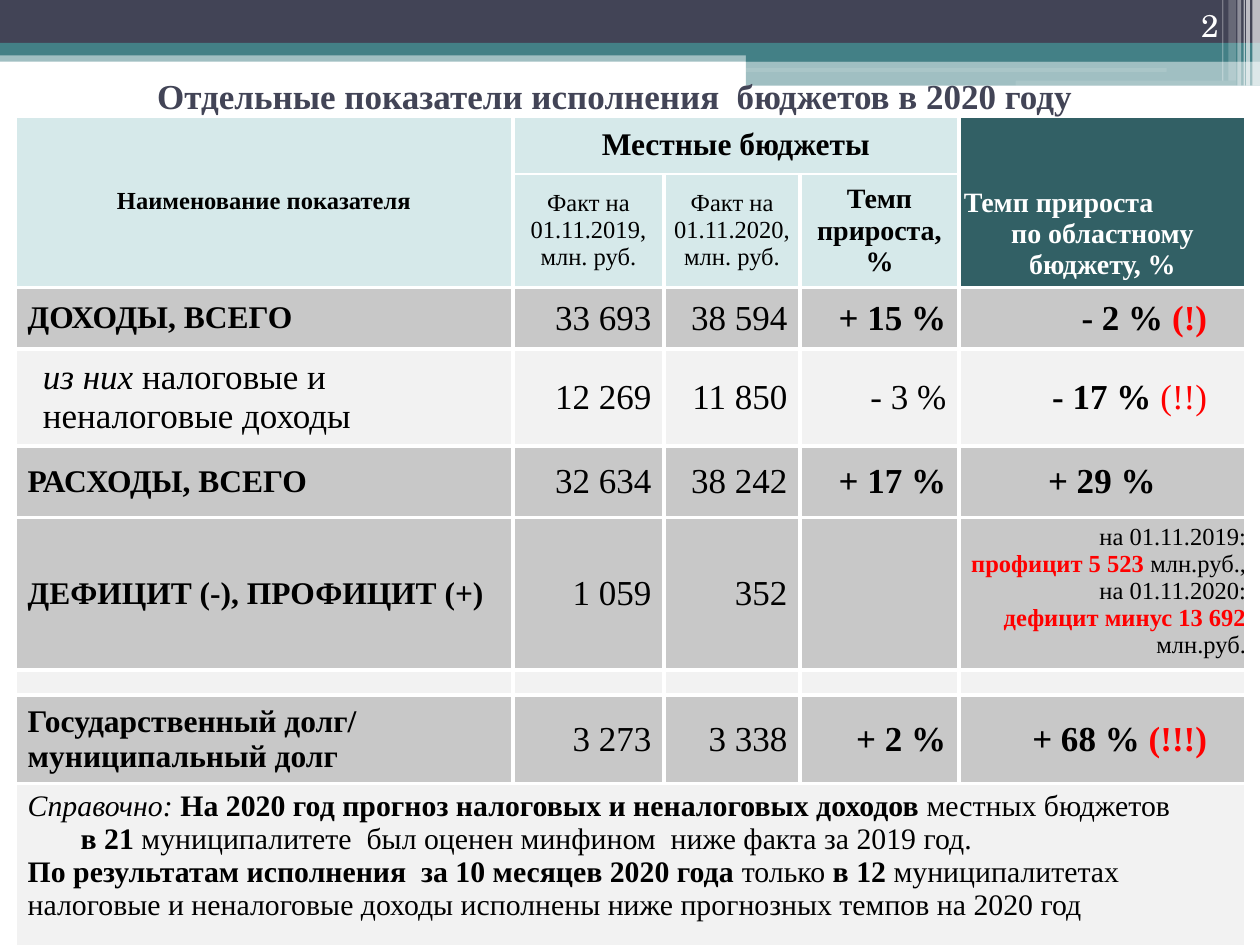
from lxml import etree
from pptx import Presentation
from pptx.dml.color import RGBColor
from pptx.enum import shapes, text
from pptx.oxml.ns import qn
from pptx.util import Inches, Pt

THEME = dict(
    font="Times New Roman", number_font="TeX Gyre Schola",
    navy="424456", teal="438086", white="FFFFFF", black="000000", red="FF0000",
    head="D6E9EA", dark="326065", strong="C8C8C8", light="F2F2F2",
    title=20, page=18, figure=20, label=18, note=17, head_size=16, small=14, spacer=6,
)
L, C, R = text.PP_ALIGN.LEFT, text.PP_ALIGN.CENTER, text.PP_ALIGN.RIGHT
TOP, MID, BOTTOM = (text.MSO_ANCHOR.TOP, text.MSO_ANCHOR.MIDDLE, text.MSO_ANCHOR.BOTTOM)

# left, top, width, height, colour, opacity %
BARS = [
    (0, 0.4, 10, 0.09, "teal", 50),
    (0, 0, 10, 0.34, "navy", 100),
    (0, 0.34, 10, 0.1, "teal", 100),
    (5.92, 0.39, 4.08, 0.1, "teal", 100),
    (5.92, 0.48, 4.08, 0.2, "teal", 50),
]
ROUNDED = [(5.91, 0.54, 3.35, 0.03, "white", 11), (8.06, 0.64, 1.75, 0.04, "white", 11)]
STRIPES = [  # left, width, height, opacity %
    (9.94, 0.06, 0.68, 65), (9.89, 0.03, 0.68, 65), (9.87, 0.01, 0.68, 60),
    (9.82, 0.03, 0.68, 40), (9.75, 0.06, 0.64, 20), (9.7, 0.01, 0.64, 30),
]

COLS = [3.95, 1.2, 1.08, 1.26, 2.28]
ROWS = [0.46, 0.9, 0.49, 0.77, 0.57, 1.2, 0.2, 0.7, 1.33]

# A run is (text, style): b bold, i italic, r red, w white. A paragraph is a list of runs.
# row, column, paragraphs, size, fill
HEADS = [
    (0, 0, [[("Наименование показателя", "b")]], "small", "head"),
    (0, 1, [[("Местные бюджеты", "b")]], "label", "head"),
    (0, 4, [[("Темп прироста", "bw")], [("по областному бюджету, %", "bw")]],
     "head_size", "dark"),
    (1, 1, [[("Факт на 01.11.2019, млн. руб.", "")]], "small", "head"),
    (1, 2, [[("Факт на 01.11.2020, млн. руб.", "")]], "small", "head"),
    (1, 3, [[("Темп прироста, %", "b")]], "head_size", "head"),
]
# label, 2019, 2020, local growth, regional growth, fill
INDICATORS = [
    ([("ДОХОДЫ, ВСЕГО", "b")], "33 693", "38 594", [("+ 15 %", "b")],
     [[("- 2 % ", "b"), ("(!)", "br")]], "strong"),
    ([("из них ", "i"), ("налоговые и неналоговые доходы", "")], "12 269", "11 850",
     [("- 3 %", "")], [[("- 17 % ", "b"), ("(!!)", "r")]], "light"),
    ([("РАСХОДЫ, ВСЕГО", "b")], "32 634", "38 242", [("+ 17 %", "b")],
     [[("+ 29 %", "b")]], "strong"),
    ([("ДЕФИЦИТ (-), ПРОФИЦИТ (+)", "b")], "1 059", "352", [],
     [[("на 01.11.2019:", "")],
      [("профицит 5 523 ", "br"), ("млн.руб.,", "")],
      [("на 01.11.2020:", "")],
      [("дефицит минус 13 692 ", "br"), ("млн.руб.", "")]], "strong"),
    ([], "", "", [], [[]], "light"),
    ([("Государственный долг/ муниципальный долг", "b")], "3 273", "3 338",
     [("+ 2 %", "b")], [[("+ 68 % ", "b"), ("(!!!)", "br")]], "strong"),
]
SUBSET, EXPENSES, DEFICIT, SPACER = 1, 2, 3, 4  # positions in INDICATORS
NOTE = [
    [("Справочно: ", "i"), ("На 2020 год прогноз налоговых и неналоговых доходов ", "b"),
     ("местных бюджетов", ""), ("\n", ""), ("в 21 ", "b"),
     ("муниципалитете  был оценен минфином  ниже факта за 2019 год.", "")],
    [("По результатам исполнения  за 10 месяцев 2020 года ", "b"), ("только ", ""),
     ("в 12 ", "b"),
     ("муниципалитетах налоговые и неналоговые доходы исполнены ниже прогнозных "
      "темпов на 2020 год", "")],
]


def rgb(name):
    return RGBColor.from_string(THEME[name])


def add_bar(s, kind, left, top, width, height, color, opacity):
    sp = s.shapes.add_shape(kind, *map(Inches, (left, top, width, height)))
    sp.shadow.inherit = False
    sp.line.fill.background()
    sp.fill.solid()
    sp.fill.fore_color.rgb = rgb(color)
    if opacity < 100:
        clr = sp._element.spPr.find(".//" + qn("a:srgbClr"))
        etree.SubElement(clr, qn("a:alpha"), val=str(opacity * 1000))


def add_run(p, words, size, color="black", bold=False, italic=False, font="font"):
    r = p.add_run()
    r.text = words
    f = r.font
    f.name, f.size, f.bold, f.italic = THEME[font], Pt(THEME[size]), bold, italic
    f.color.rgb = rgb(color)


def write(tf, paragraphs, size, align):
    for i, runs in enumerate(paragraphs):
        p = tf.add_paragraph() if i else tf.paragraphs[0]
        p.alignment = align
        for words, style in runs:
            if words == "\n":
                p.add_line_break()
                continue
            color = "red" if "r" in style else "white" if "w" in style else "black"
            add_run(p, words, size, color, "b" in style, "i" in style)
        if not runs:
            etree.SubElement(p._p, qn("a:endParaRPr"), sz=str(THEME[size] * 100))


def set_cell(cell, paragraphs, size, fill, align=L, anchor=MID, margins=(0.1, 0.05, 0.1, 0.05)):
    cell.margin_left, cell.margin_top, cell.margin_right, cell.margin_bottom = map(Inches, margins)
    cell.vertical_anchor = anchor
    write(cell.text_frame, paragraphs, size, align)
    cell.fill.solid()
    cell.fill.fore_color.rgb = rgb(fill)


def add_borders(cell, inner_edge=None):
    """White lines on all four sides; inner_edge is drawn thinner."""
    tcPr = cell._tc.get_or_add_tcPr()
    for i, side in enumerate(("lnL", "lnR", "lnT", "lnB")):
        width = Pt(1 if side == inner_edge else 2.25)
        ln = etree.Element(qn("a:" + side), w=str(int(width)))
        fill = etree.SubElement(ln, qn("a:solidFill"))
        etree.SubElement(fill, qn("a:srgbClr"), val=THEME["white"])
        tcPr.insert(i, ln)


def add_label(s, box, words, size, color, align, anchor, **style):
    tf = s.shapes.add_textbox(*map(Inches, box)).text_frame
    tf.word_wrap = True
    tf.vertical_anchor = anchor
    p = tf.paragraphs[0]
    p.alignment = align
    add_run(p, words, size, color, **style)


def add_indicators(s):
    frame = s.shapes.add_table(len(ROWS), len(COLS), *map(Inches, (0.12, 0.92, sum(COLS), sum(ROWS))))
    tbl = frame.table
    tbl.first_row = tbl.horz_banding = False
    for col, width in zip(tbl.columns, COLS):
        col.width = Inches(width)
    for row, height in zip(tbl.rows, ROWS):
        row.height = Inches(height)
    last = len(ROWS) - 1
    for start, end in (((0, 0), (1, 0)), ((0, 1), (0, 3)), ((0, 4), (1, 4)), ((last, 0), (last, 4))):
        tbl.cell(*start).merge(tbl.cell(*end))

    for row, col, paragraphs, size, fill in HEADS:
        set_cell(tbl.cell(row, col), paragraphs, size, fill, C, BOTTOM if col == 4 else MID,
                 (0.04, 0.05, 0.04, 0.05))
    tbl.cell(0, 4).text_frame.paragraphs[0].alignment = L

    for i, (label, before, now, local, region, fill) in enumerate(INDICATORS):
        figures = [[(n, "")] if n else [] for n in (before, now)]
        for col, runs in enumerate([label, *figures, local]):
            size = "label" if col == 0 and i != SUBSET else "figure"
            look = dict(size=size, align=R if col else L)
            if i == SPACER:
                look = dict(size="spacer", margins=(0, 0, 0, 0))
            set_cell(tbl.cell(i + 2, col), [runs], fill=fill, **look)
        look = dict(size="figure", align=R, margins=(0.1, 0.05, 0.31, 0.05))
        if i == EXPENSES:
            look.update(align=C, margins=(0.3, 0.05, 0.31, 0.05))
        elif i == DEFICIT:
            look.update(size="small", margins=(0, 0, 0, 0.04))
        elif i == SPACER:
            look.update(size="spacer", margins=(0, 0, 0, 0))
        set_cell(tbl.cell(i + 2, 4), region, fill=fill, **look)
    subset = tbl.cell(SUBSET + 2, 0).text_frame.paragraphs[0]
    subset._p.get_or_add_pPr().set("marL", str(Inches(0.12)))

    note = tbl.cell(last, 0)
    set_cell(note, NOTE, "note", "light", anchor=TOP)
    pPr = note.text_frame.paragraphs[0]._p.get_or_add_pPr()
    pPr.set("marL", str(Inches(0.42)))
    pPr.set("indent", str(-Inches(0.42)))

    for row in range(len(ROWS)):
        for col in range(len(COLS)):
            thin = {0: "lnB", 1: "lnT"}.get(row) if 1 <= col <= 3 else None
            add_borders(tbl.cell(row, col), thin)


def main():
    prs = Presentation()
    prs.slide_width, prs.slide_height = Inches(10), Inches(7.5)
    s = prs.slides.add_slide(prs.slide_layouts[6])
    kind = shapes.MSO_SHAPE
    for bar in BARS:
        add_bar(s, kind.RECTANGLE, *bar)
    for bar in ROUNDED:
        add_bar(s, kind.ROUNDED_RECTANGLE, *bar)
    for left, width, height, opacity in STRIPES:
        add_bar(s, kind.RECTANGLE, left, 0, width, height, "white", opacity)
    add_label(s, (8.94, 0, 0.83, 0.4), "2", "page", "white", R, BOTTOM, font="number_font")
    add_indicators(s)
    add_label(s, (0.23, 0.52, 9.3, 0.47), "Отдельные показатели исполнения  бюджетов в 2020 году",
              "title", "navy", C, MID, bold=True)
    prs.save("out.pptx")


if __name__ == "__main__":
    main()
